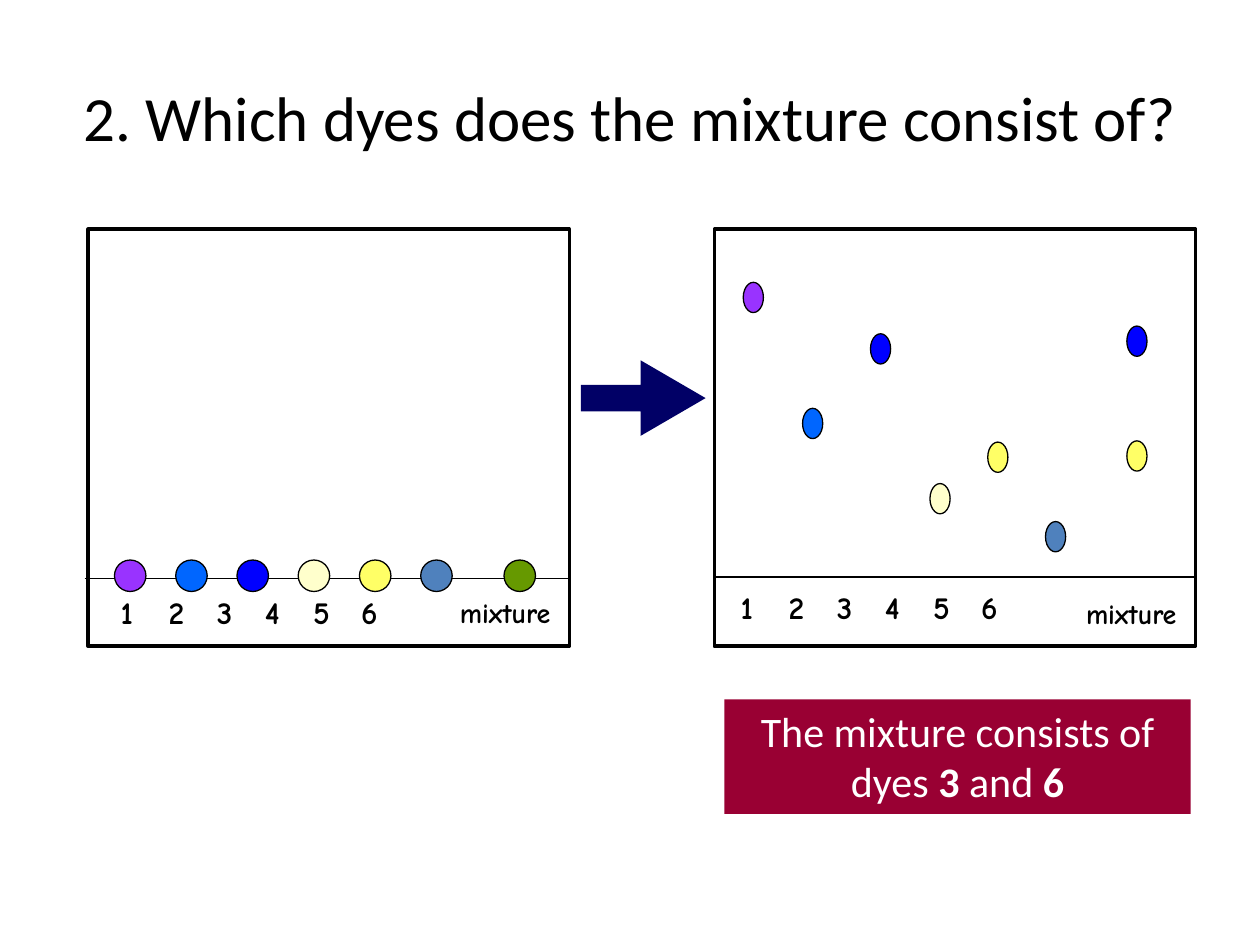
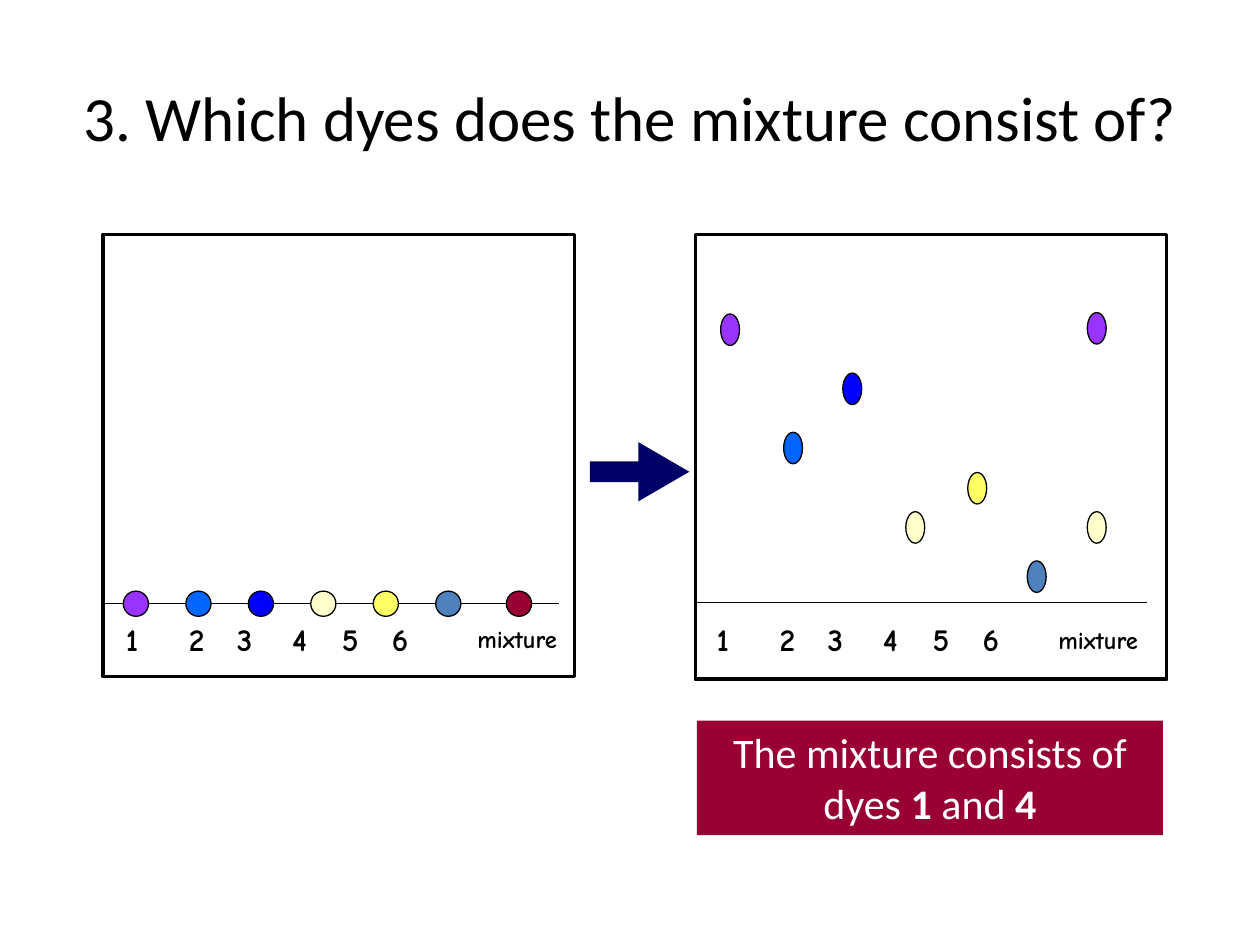
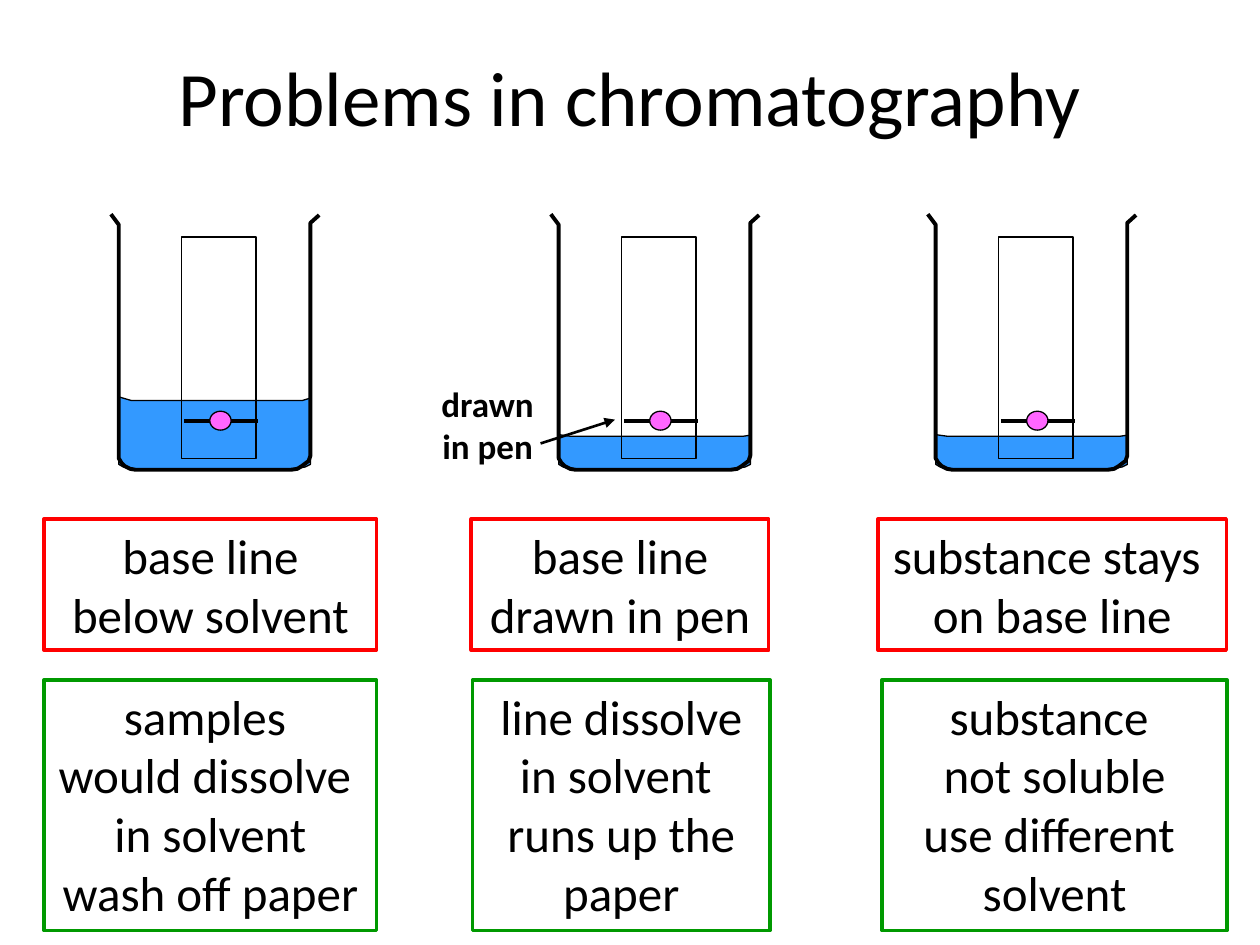
from lxml.etree import SubElement
from pptx import Presentation
from pptx.dml.color import RGBColor
from pptx.enum.shapes import MSO_CONNECTOR, MSO_SHAPE
from pptx.enum.text import MSO_ANCHOR, MSO_AUTO_SIZE, PP_ALIGN
from pptx.oxml.ns import qn
from pptx.util import Pt

BLACK = RGBColor(0x00, 0x00, 0x00)
WHITE = RGBColor(0xFF, 0xFF, 0xFF)
PURPLE = RGBColor(0x99, 0x33, 0xFF)
SKY = RGBColor(0x00, 0x66, 0xFF)
BLUE = RGBColor(0x00, 0x00, 0xFF)
CREAM = RGBColor(0xFF, 0xFF, 0xCC)
YELLOW = RGBColor(0xFF, 0xFF, 0x66)
STEEL = RGBColor(0x4F, 0x81, 0xBD)
OLIVE = RGBColor(0x66, 0x99, 0x00)
CRIMSON = RGBColor(0x99, 0x00, 0x33)
NAVY = RGBColor(0x01, 0x00, 0x66)
WATER = RGBColor(0x33, 0x99, 0xFF)
PINK = RGBColor(0xFF, 0x66, 0xFF)
RED = RGBColor(0xFF, 0x00, 0x00)
GREEN = RGBColor(0x00, 0x99, 0x00)
DYES = [PURPLE, SKY, BLUE, CREAM, YELLOW, STEEL]

BODY_FONT = "Calibri"
LABEL_FONT = "Comic Neue"

GLASS = [(0, 0), (4.5, 6), (4.5, 137.5), (4.5, 139.5), (6, 142), (8, 144),
         (11, 145.5), (14, 146), (103, 146), (106.5, 145.5), (109, 144),
         (111, 142.5), (113, 141), (114, 138), (114, 5), (119, 0.5)]
LIQUID_BOTTOM = [(114, 143), (111, 144.5), (105, 145.5), (13, 145.5),
                 (7, 144.5), (4.5, 143)]


def write(sp, text, size=28, font=BODY_FONT, color=BLACK, bold=False,
          align=PP_ALIGN.CENTER, anchor=MSO_ANCHOR.TOP, insets=(7.2, 3.6), tabs=()):
    """Fill a shape with text: newline ends a paragraph, \\v a line, *...* is bold."""
    tf = sp.text_frame
    tf.word_wrap = True
    tf.auto_size = MSO_AUTO_SIZE.NONE
    tf.vertical_anchor = anchor
    tf.margin_left = tf.margin_right = Pt(insets[0])
    tf.margin_top = tf.margin_bottom = Pt(insets[1])
    for i, paragraph in enumerate(text.split("\n")):
        p = tf.add_paragraph() if i else tf.paragraphs[0]
        p.alignment = align
        if tabs:
            tab_list = SubElement(p._p.get_or_add_pPr(), qn("a:tabLst"))
            for tab in tabs:
                SubElement(tab_list, qn("a:tab"), pos=str(Pt(tab)), algn="l")
        for j, piece in enumerate(paragraph.split("*")):
            for k, line in enumerate(piece.split("\v")):
                if k:
                    p.add_line_break()
                if not line:
                    continue
                r = p.add_run()
                r.text = line
                r.font.size = Pt(size)
                r.font.name = font
                r.font.bold = bold or j % 2 == 1
                r.font.color.rgb = color


def paint(sp, fill=None, line=None, width=0.75):
    """Set the fill and outline of a shape and drop its shadow."""
    sp.shadow.inherit = False
    if fill is None:
        sp.fill.background()
    else:
        sp.fill.solid()
        sp.fill.fore_color.rgb = fill
    if line is None:
        sp.line.fill.background()
    else:
        sp.line.color.rgb = line
        sp.line.width = Pt(width)


def add_shape(s, kind, x, y, w, h, **look):
    """Add a preset shape."""
    sp = s.shapes.add_shape(kind, Pt(x), Pt(y), Pt(w), Pt(h))
    paint(sp, **look)
    return sp


def add_text(s, x, y, w, h, text, **style):
    """Add a text box."""
    write(s.shapes.add_textbox(Pt(x), Pt(y), Pt(w), Pt(h)), text, **style)


def add_line(s, x1, y1, x2, y2, width=0.75, arrow=False):
    """Add a straight black line, with an arrowhead at its end if asked."""
    sp = s.shapes.add_connector(MSO_CONNECTOR.STRAIGHT, Pt(x1), Pt(y1), Pt(x2), Pt(y2))
    sp.line.color.rgb = BLACK
    sp.line.width = Pt(width)
    if arrow:
        SubElement(sp.line._get_or_add_ln(), qn("a:tailEnd"), type="triangle")
    SubElement(sp._element.spPr, qn("a:effectLst"))


def add_outline(s, x, y, points, close=False, **look):
    """Add a freeform through points given relative to x, y."""
    corners = [(Pt(x + dx), Pt(y + dy)) for dx, dy in points]
    builder = s.shapes.build_freeform(*corners[0])
    builder.add_line_segments(corners[1:], close=close)
    paint(builder.convert_to_shape(), **look)


def add_spot(s, cx, cy, w, h, color):
    """Add a dye spot around its centre."""
    add_shape(s, MSO_SHAPE.OVAL, cx - w / 2, cy - h / 2, w, h, fill=color, line=BLACK)


def add_slide(prs, title, size, top):
    """Add a title-only slide with its title."""
    s = prs.slides.add_slide(prs.slide_layouts[5])
    sp = s.shapes.title
    sp.left, sp.top, sp.width, sp.height = Pt(36), Pt(top), Pt(648), Pt(90)
    write(sp, title, size=size, anchor=MSO_ANCHOR.MIDDLE)
    return s


def paper_sheet(s, box, base, spots, spot_size, numbers, mixture, style):
    """Draw a chromatography sheet with its base line, spots and labels."""
    x, y, w, h = box
    add_shape(s, MSO_SHAPE.RECTANGLE, x, y, w, h, fill=WHITE, line=BLACK, width=2)
    start, end, level = base
    add_line(s, x + start, y + level, x + end, y + level)
    for dx, dy, color in spots:
        add_spot(s, x + dx, y + dy, *spot_size, color)
    label = dict(font=LABEL_FONT, bold=True, align=PP_ALIGN.LEFT)
    add_text(s, x + numbers[0], y + numbers[1], 218, 36, "1\t2\t3\t4\t5\t6", size=18,
             insets=(style["inset"], 3.6), tabs=style["tabs"], **label)
    add_text(s, x + mixture[0], y + mixture[1], 65, 26, "mixture",
             size=style["mixture_size"], insets=(0, 3.6), **label)


def start_spots(first, step, mixture_x, level, mixture_color):
    """List the equally spaced dyes on the base line, then the mixture."""
    dyes = [(first + i * step, level, color) for i, color in enumerate(DYES)]
    return dyes + [(mixture_x, level, mixture_color)]


def run_spots(places, mixture):
    """List the dyes where they ran to, then the parts of the mixture."""
    return [(dx, dy, color) for (dx, dy), color in zip(places, DYES)] + mixture


def big_arrow(s, x, y, w, h):
    """Add the block arrow between two sheets."""
    sp = add_shape(s, MSO_SHAPE.RIGHT_ARROW, x, y, w, h, fill=NAVY)
    sp.adjustments[0], sp.adjustments[1] = 0.35, 0.86


def answer(s, x, y, first, second):
    """Add the answer band."""
    sp = add_shape(s, MSO_SHAPE.RECTANGLE, x, y, 266.4, 65.5, fill=CRIMSON)
    write(sp, f"The mixture consists of dyes *{first}* and *{second}*", size=24, color=WHITE)


def question_two(prs):
    """Build the slide of question 2."""
    s = add_slide(prs, "2. Which dyes does the mixture consist of?", 36, 21.6)
    style = dict(inset=12, tabs=[27.5 * i for i in range(1, 6)], mixture_size=16)
    paper_sheet(s, (50.4, 131, 275, 238.3), (-2, 276, 199.5),
                start_spots(24, 35, 246.6, 198, OLIVE), (18, 18),
                (6.5, 204.5), (212.4, 206), style)
    places = [(22.3, 39), (56.2, 111), (95, 68.4), (129, 154), (162, 130.3), (195, 175.7)]
    paper_sheet(s, (408.2, 131, 275, 238.3), (0.5, 275, 198.7),
                run_spots(places, [(241.5, 129.6, YELLOW), (241.5, 64, BLUE)]), (11.5, 17.3),
                (3, 201.6), (212.4, 206.6), style)
    big_arrow(s, 331.9, 205.9, 71.3, 43.2)
    answer(s, 414, 399.6, 3, 6)


def question_three(prs):
    """Build the slide of question 3."""
    s = add_slide(prs, "3. Which dyes does the mixture consist of?", 36, 21.6)
    style = dict(inset=7.2, tabs=[36, 63.5, 95, 123.5, 152], mixture_size=14)
    paper_sheet(s, (59, 134, 269.3, 252.7), (0, 260.6, 211),
                start_spots(18.7, 35.7, 237.6, 211, CRIMSON), (14.4, 14.4),
                (5.8, 216.7), (213.8, 219), style)
    places = [(19.8, 54.4), (55.8, 122), (89.6, 88.2), (125.6, 167.4), (161, 145), (195, 195.5)]
    paper_sheet(s, (397.4, 134, 269.3, 254.2), (-0.7, 257.8, 210.2),
                run_spots(places, [(229.3, 167.4, CREAM), (229.3, 53.6, PURPLE)]), (10.8, 18),
                (5, 216.7), (207.4, 219.6), style)
    big_arrow(s, 337, 252.7, 56.9, 33.8)
    answer(s, 398.2, 411.8, 1, 4)


def beaker(s, x, y, level):
    """Draw a beaker filled to a level, with a paper strip and its spot."""
    dip = (145.5 - level) * 0.05
    surface = [(4.5, level), (11.5, level + dip), (109.5, level + dip), (114, level + dip / 3)]
    add_outline(s, x, y, surface + LIQUID_BOTTOM, close=True, fill=WATER, line=BLACK)
    add_line(s, x + 41.8, y + 118, x + 84.2, y + 118, width=2.25)
    add_outline(s, x, y, GLASS, line=BLACK, width=2.25)
    add_spot(s, x + 62.6, y + 118, 12.2, 10.8, PINK)
    add_shape(s, MSO_SHAPE.RECTANGLE, x + 40.5, y + 13, 42.5, 126.7, line=BLACK)


def caption(s, x, y, w, h, color, text):
    """Add a framed caption."""
    sp = add_shape(s, MSO_SHAPE.RECTANGLE, x, y, w, h, fill=WHITE, line=color, width=2)
    write(sp, text)


def problems(prs):
    """Build the slide of three problems, each with its reason."""
    s = add_slide(prs, "Problems in chromatography", 44, 9.4)
    columns = [
        (63.4, 104.4, 25.2, 190, "base line\nbelow solvent",
         25.2, 190, "samples \nwould dissolve \vin solvent\vwash off paper"),
        (314.8, 126, 269.3, 170, "base line\ndrawn in pen",
         270, 170, "line dissolve in solvent \vruns up the paper"),
        (530.2, 126, 501.8, 199, "substance stays \non base line",
         504, 197.3, "substance \vnot soluble\vuse different \vsolvent"),
    ]
    for beaker_x, level, problem_x, problem_w, problem, reason_x, reason_w, reason in columns:
        beaker(s, beaker_x, 122.4, level)
        caption(s, problem_x, 296.6, problem_w, 75, RED, problem)
        caption(s, reason_x, 388.5, reason_w, 143.3, GREEN, reason)
    add_text(s, 244.8, 215.3, 67.7, 55.4, "drawn\nin pen", size=20, bold=True)
    add_line(s, 308.9, 253.4, 351.4, 239.8, width=1.5, arrow=True)


def main():
    """Build and save the slides."""
    prs = Presentation()
    prs.slide_width, prs.slide_height = Pt(720), Pt(540)
    question_two(prs)
    question_three(prs)
    problems(prs)
    prs.save("out.pptx")


if __name__ == "__main__":
    main()
